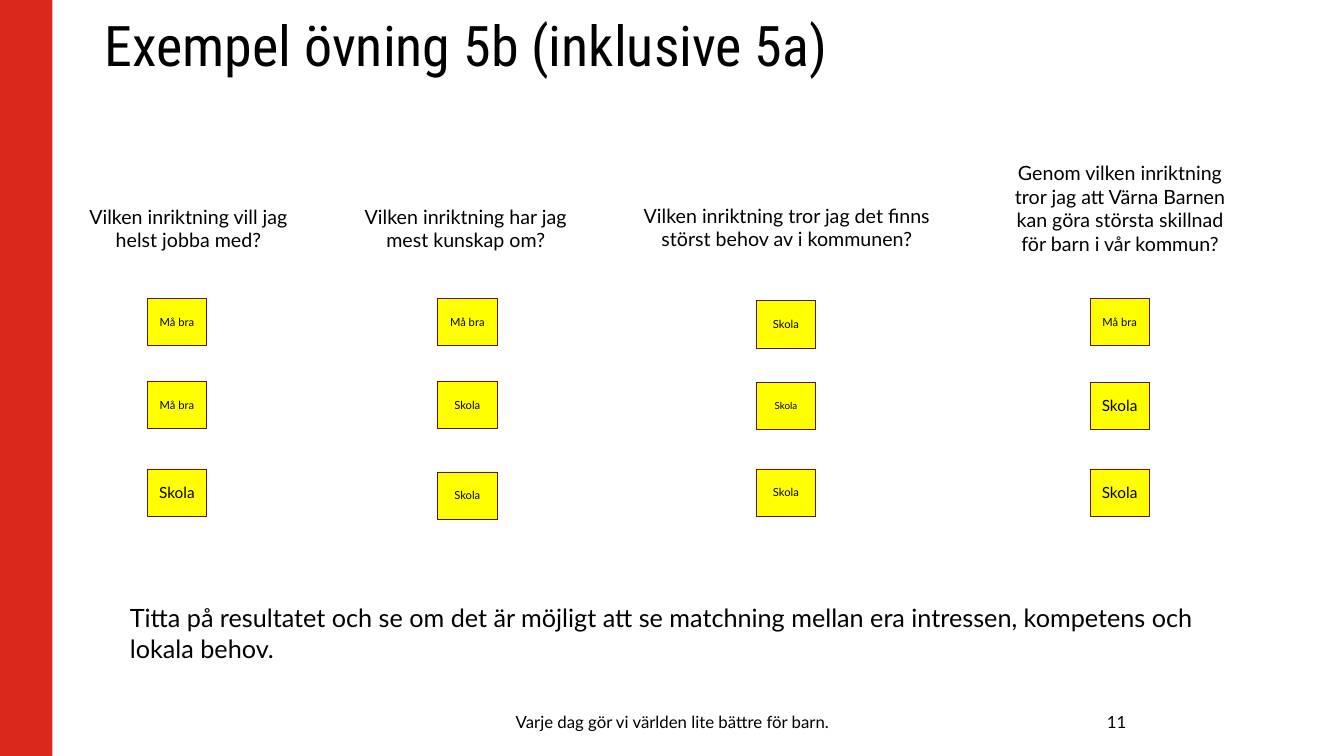
from dataclasses import dataclass

from pptx import Presentation
from pptx.dml.color import RGBColor
from pptx.enum.shapes import MSO_SHAPE
from pptx.enum.text import MSO_ANCHOR, PP_ALIGN
from pptx.shapes.autoshape import Shape
from pptx.slide import Slide
from pptx.util import Inches, Pt

RECT = MSO_SHAPE.RECTANGLE
TOP, MIDDLE = MSO_ANCHOR.TOP, MSO_ANCHOR.MIDDLE
LEFT, CENTER, RIGHT = PP_ALIGN.LEFT, PP_ALIGN.CENTER, PP_ALIGN.RIGHT

COLORS = {"red": "DA291C", "yellow": "FFFF00", "outline": "60120C", "text": "000000"}
BODY_FONT, TITLE_FONT = "Lato", "Roboto Condensed"
NOTE_W, NOTE_H = 0.59, 0.47

Box = tuple[float, float, float, float]


@dataclass
class Note:
    top: float
    text: str
    size: float = 8


@dataclass
class Column:
    question: str
    box: Box
    note_left: float
    notes: list[Note]


COLUMNS = [
    Column("Vilken inriktning vill jag helst jobba med?", (0.74, 1.98, 2.26, 0.57), 1.46,
           [Note(2.96, "Må bra"), Note(3.78, "Må bra"), Note(4.65, "Skola", 11)]),
    Column("Vilken inriktning har jag mest kunskap om?", (3.41, 1.98, 2.42, 0.57), 4.34,
           [Note(2.96, "Må bra"), Note(3.78, "Skola"), Note(4.68, "Skola")]),
    Column("Vilken inriktning tror jag det finns störst behov av i kommunen?",
           (6.24, 1.97, 3.13, 0.81), 7.5,
           [Note(2.98, "Skola"), Note(3.79, "Skola", 7), Note(4.65, "Skola")]),
    Column("Genom vilken inriktning tror jag att Värna Barnen kan göra största "
           "skillnad för barn i vår kommun?", (9.96, 1.55, 2.3, 1.51), 10.81,
           [Note(2.96, "Må bra"), Note(3.79, "Skola", 11), Note(4.65, "Skola", 11)]),
]


def color(name: str) -> RGBColor:
    return RGBColor.from_string(COLORS[name])


def write(sp: Shape, text: str, *, size: float, font: str = BODY_FONT,
          align: PP_ALIGN = LEFT, anchor: MSO_ANCHOR = TOP) -> None:
    tf = sp.text_frame
    tf.word_wrap = True
    tf.vertical_anchor = anchor
    p = tf.paragraphs[0]
    p.alignment = align
    r = p.add_run()
    r.text = text
    r.font.name = font
    r.font.size = Pt(size)
    r.font.color.rgb = color("text")


def add_text(s: Slide, box: Box, text: str, **style) -> None:
    write(s.shapes.add_textbox(*map(Inches, box)), text, **style)


def add_rect(s: Slide, box: Box, fill: str, outline: str | None = None) -> Shape:
    sp = s.shapes.add_shape(RECT, *map(Inches, box))
    sp.shadow.inherit = False
    sp.fill.solid()
    sp.fill.fore_color.rgb = color(fill)
    if outline:
        sp.line.color.rgb = color(outline)
        sp.line.width = Pt(0.25)
    else:
        sp.line.fill.background()
    return sp


def add_column(s: Slide, column: Column) -> None:
    """Draw a question with its sticky notes below."""
    add_text(s, column.box, column.question, size=14, align=CENTER)
    for note in column.notes:
        sp = add_rect(s, (column.note_left, note.top, NOTE_W, NOTE_H), "yellow", "outline")
        write(sp, note.text, size=note.size, align=CENTER, anchor=MIDDLE)


def main() -> None:
    prs = Presentation()
    prs.slide_width, prs.slide_height = Inches(13.33), Inches(7.5)
    s = prs.slides.add_slide(prs.slide_layouts[6])

    add_rect(s, (0, 0, 0.52, 7.5), "red")
    add_text(s, (0.94, 0.06, 11.71, 1.08), "Exempel övning 5b (inklusive 5a)",
             size=40, font=TITLE_FONT)
    for column in COLUMNS:
        add_column(s, column)
    add_text(s, (1.19, 5.93, 11.22, 0.71),
             "Titta på resultatet och se om det är möjligt att se matchning mellan "
             "era intressen, kompetens och lokala behov.", size=18)
    add_text(s, (2.77, 7.06, 7.8, 0.2), "Varje dag gör vi världen lite bättre för barn.",
             size=12, align=CENTER, anchor=MIDDLE)
    add_text(s, (10.57, 7.06, 0.7, 0.2), "11", size=12, align=RIGHT, anchor=MIDDLE)

    prs.save("out.pptx")


if __name__ == "__main__":
    main()
